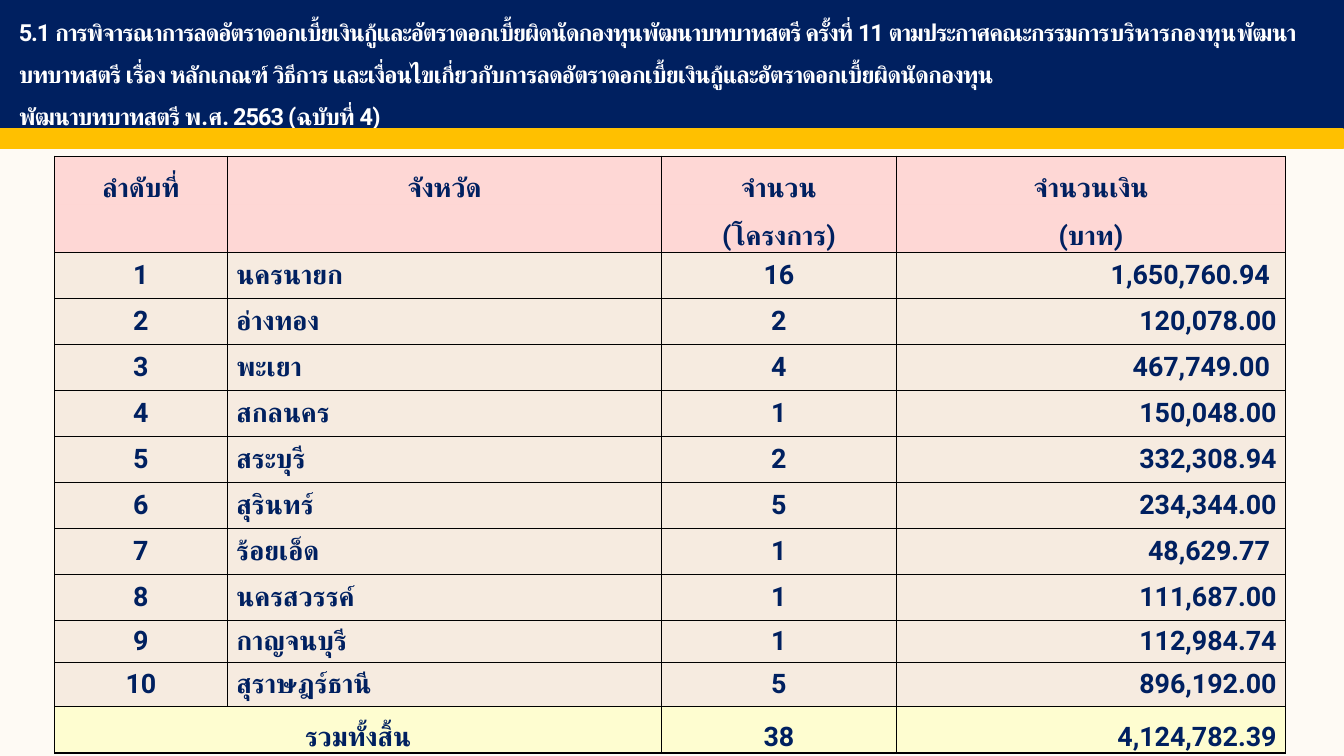
from lxml.etree import SubElement
from pptx import Presentation
from pptx.dml.color import RGBColor
from pptx.enum.shapes import MSO_SHAPE
from pptx.enum.text import MSO_ANCHOR, MSO_AUTO_SIZE, PP_ALIGN
from pptx.oxml.ns import qn
from pptx.util import Pt

COLORS = {
    "background": "FEFAF4",
    "navy": "002060",
    "gold": "FFC000",
    "white": "FFFFFF",
    "border": "000000",
    "header": "FFC9C9",
    "body": "F4E8DC",
    "total": "FFFEC8",
}
FONT = "Roboto"

TITLE_PARAGRAPHS = [
    [
        ("5.1 การพิจารณาการลดอัตราดอกเบี้ยเงินกู้และอัตราดอกเบี้ยผิดนัดกองทุนพัฒนาบทบาทสตรี ครั้งที่ 11 ตามประกาศคณะกรรมการ", -70),
        ("บริหารกองทุน", -40),
        ("พัฒนาบทบาทสตรี เรื่อง หลักเกณฑ์ วิธีการ และเงื่อนไขเกี่ยวกับการลดอัตราดอกเบี้ยเงินกู้และอัตราดอกเบี้ยผิดนัดกองทุน", -60),
    ],
    [("พัฒนาบทบาทสตรี พ.ศ. 2563 (ฉบับที่ 4)", -60)],
]

PROVINCES = [
    ("นครนายก", "16", "1,650,760.94"),
    ("อ่างทอง", "2", "120,078.00"),
    ("พะเยา", "4", "467,749.00"),
    ("สกลนคร", "1", "150,048.00"),
    ("สระบุรี", "2", "332,308.94"),
    ("สุรินทร์", "5", "234,344.00"),
    ("ร้อยเอ็ด", "1", "48,629.77"),
    ("นครสวรรค์", "1", "111,687.00"),
    ("กาญจนบุรี", "1", "112,984.74"),
    ("สุราษฎร์ธานี", "5", "896,192.00"),
]
INDENTED_AMOUNTS = {"1,650,760.94", "467,749.00", "48,629.77"}
ROWS = [
    ("ลำดับที่", "จังหวัด", "จำนวน", "จำนวนเงิน"),
    ("", "", "(โครงการ)", "(บาท)"),
    *[(str(number), *province) for number, province in enumerate(PROVINCES, 1)],
    ("รวมทั้งสิ้น", "", "38", "4,124,782.39"),
]
TOTAL_ROW = len(ROWS) - 1
COLUMN_WIDTHS = [103, 258.5, 139.5, 232]
ROW_HEIGHTS = [23, 23] + [27.4] * 8 + [25.2, 25.9, 11.5]
ALIGNMENTS = [PP_ALIGN.CENTER, PP_ALIGN.LEFT, PP_ALIGN.CENTER, PP_ALIGN.RIGHT]


def style_run(run, size, color):
    run.font.size = Pt(size)
    run.font.bold = True
    run.font.name = FONT
    run.font.color.rgb = RGBColor.from_string(COLORS[color])
    properties = run.font._element
    SubElement(properties, qn("a:cs")).set("typeface", FONT)
    return properties


def add_band(slide, top, height, color):
    band = slide.shapes.add_shape(MSO_SHAPE.RECTANGLE, Pt(-0.5), Pt(top), Pt(800), Pt(height))
    band.shadow.inherit = False
    band.fill.solid()
    band.fill.fore_color.rgb = RGBColor.from_string(COLORS[color])
    band.line.color.rgb = RGBColor.from_string(COLORS[color])
    band.line.width = Pt(1)


presentation = Presentation()
presentation.slide_width = Pt(800)
presentation.slide_height = Pt(450)
slide = presentation.slides.add_slide(presentation.slide_layouts[5])
slide.background.fill.solid()
slide.background.fill.fore_color.rgb = RGBColor.from_string(COLORS["background"])

table = slide.shapes.add_table(
    len(ROWS), len(COLUMN_WIDTHS), Pt(32.4), Pt(92.9), Pt(sum(COLUMN_WIDTHS)), Pt(sum(ROW_HEIGHTS))
).table
table.first_row = False
table.horz_banding = False
for column, width in zip(table.columns, COLUMN_WIDTHS):
    column.width = Pt(width)
for row, height in zip(table.rows, ROW_HEIGHTS):
    row.height = Pt(height)

for row_index, texts in enumerate(ROWS):
    is_header = row_index < 2
    is_total = row_index == TOTAL_ROW
    color = "header" if is_header else "total" if is_total else "body"
    border_widths = {
        "lnL": 0.5,
        "lnR": 0.5,
        "lnT": 0 if row_index == 1 else 0.5,
        "lnB": 0 if row_index == 0 else 1 if is_total else 0.5,
    }
    for column_index, text in enumerate(texts):
        cell = table.cell(row_index, column_index)
        cell.vertical_anchor = MSO_ANCHOR.MIDDLE
        cell.margin_left = cell.margin_right = Pt(0.7 if is_header else 5.4)
        cell.margin_top = Pt(0.7 if is_header else 0)
        cell.margin_bottom = Pt(0)
        if text in INDENTED_AMOUNTS:
            cell.margin_right = Pt(9.4)

        cell_properties = cell._tc.get_or_add_tcPr()
        for side, width in border_widths.items():
            border = SubElement(cell_properties, qn(f"a:{side}"))
            border.set("w", str(Pt(width)))
            if width:
                border_fill = SubElement(border, qn("a:solidFill"))
                SubElement(border_fill, qn("a:srgbClr")).set("val", COLORS["border"])
            else:
                SubElement(border, qn("a:noFill"))
        cell.fill.solid()
        cell.fill.fore_color.rgb = RGBColor.from_string(COLORS[color])
        fill_color = cell_properties.find(qn("a:solidFill")).find(qn("a:srgbClr"))
        SubElement(fill_color, qn("a:alpha")).set("val", "70000" if is_header else "80000")

        paragraph = cell.text_frame.paragraphs[0]
        paragraph.text = text
        paragraph.alignment = PP_ALIGN.CENTER if is_header else ALIGNMENTS[column_index]
        if is_header or is_total:
            paragraph.line_spacing = 1.5
        if is_total:
            paragraph.space_after = Pt(5 if column_index == 0 else 3)
        for run in paragraph.runs:
            style_run(run, 16, "navy")

table.cell(TOTAL_ROW, 0).merge(table.cell(TOTAL_ROW, 1))

add_band(slide, 0, 77, "navy")

title = slide.shapes.title
title.left, title.top, title.width, title.height = Pt(4), Pt(4.3), Pt(790), Pt(71.3)
title_frame = title.text_frame
title_frame.word_wrap = True
title_frame.auto_size = MSO_AUTO_SIZE.NONE
title_frame.vertical_anchor = MSO_ANCHOR.MIDDLE
title_frame.text = "\n".join("" for _ in TITLE_PARAGRAPHS)
for paragraph, parts in zip(title_frame.paragraphs, TITLE_PARAGRAPHS):
    paragraph.alignment = PP_ALIGN.LEFT
    paragraph.line_spacing = 1.5
    paragraph.space_before = Pt(0)
    for text, spacing in parts:
        run = paragraph.add_run()
        run.text = text
        style_run(run, 14, "white").set("spc", str(spacing))
slide.shapes._spTree.append(title._element)

add_band(slide, 77, 11.5, "gold")

presentation.save("out.pptx")
